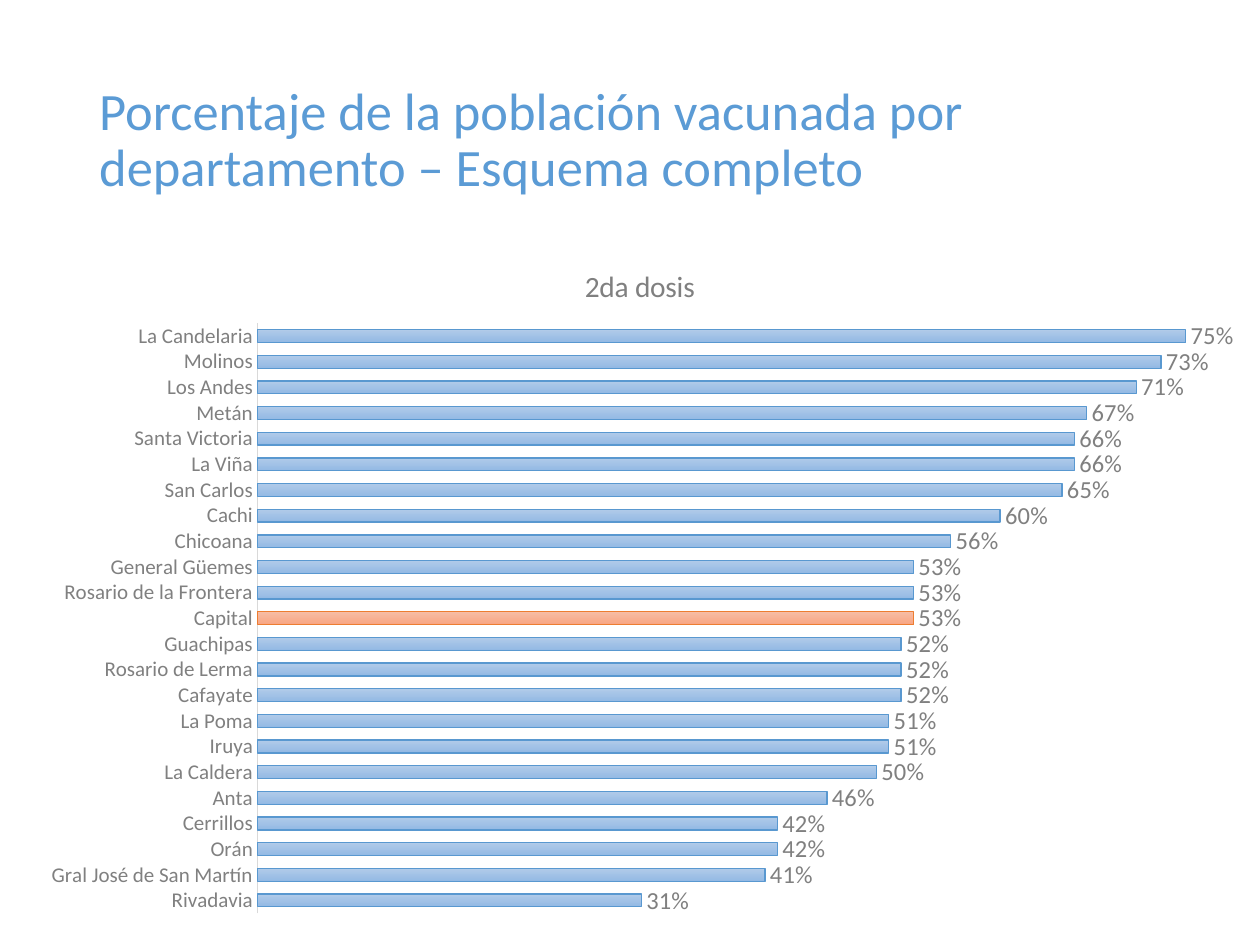
from pptx import Presentation
from pptx.util import Pt
from pptx.dml.color import RGBColor as RGB
from pptx.chart.data import CategoryChartData as ChartData
from pptx.enum.chart import XL_CHART_TYPE as Kind
from pptx.enum.chart import XL_LABEL_POSITION as Spot
from pptx.enum.chart import XL_TICK_MARK as Tick
from pptx.enum.text import MSO_ANCHOR as Anchor, PP_ALIGN as Align
from pptx.oxml import parse_xml
from pptx.oxml.ns import nsdecls, qn

COLORS = {
    "title": "5B9BD5", "text": "808080", "axis": "D9D9D9",
    "top": "B1CBE9", "base": "93B9E4", "edge": "5998D0",
    "hot top": "F7BDA5", "hot base": "F8A582", "hot edge": "ED7D31",
}
FONT = "Calibri"
HOT = "Capital"
RATES = {
    "Rivadavia": 0.31, "Gral José de San Martín": 0.41, "Orán": 0.42,
    "Cerrillos": 0.42, "Anta": 0.46, "La Caldera": 0.5, "Iruya": 0.51,
    "La Poma": 0.51, "Cafayate": 0.52, "Rosario de Lerma": 0.52,
    "Guachipas": 0.52, "Capital": 0.53, "Rosario de la Frontera": 0.53,
    "General Güemes": 0.53, "Chicoana": 0.56, "Cachi": 0.6,
    "San Carlos": 0.65, "La Viña": 0.66, "Santa Victoria": 0.66,
    "Metán": 0.67, "Los Andes": 0.71, "Molinos": 0.73,
    "La Candelaria": 0.75,
}


def place(host, index, inner="", **spots):
    """Give a chart part a fixed layout, as shares of the chart's size."""
    old = host.find(qn("c:layout"))
    if old is not None:
        host.remove(old)
    modes = '<c:xMode val="edge"/><c:yMode val="edge"/>'
    sizes = "".join(f'<c:{key} val="{val}"/>' for key, val in spots.items())
    host.insert(index, parse_xml(
        f'<c:layout {nsdecls("c")}><c:manualLayout>{inner}{modes}{sizes}'
        '</c:manualLayout></c:layout>'))


class Deck:
    def __init__(self):
        self.prs = Presentation()
        self.prs.slide_width, self.prs.slide_height = Pt(720), Pt(540)
        self.slide = self.prs.slides.add_slide(self.prs.slide_layouts[5])

    def color(self, name):
        return RGB.from_string(COLORS[name])

    def style(self, font, size, name="text"):
        font.name, font.size, font.bold = FONT, Pt(size), False
        font.color.rgb = self.color(name)

    def title(self, text, *box):
        shape = self.slide.shapes.title
        shape.left, shape.top, shape.width, shape.height = map(Pt, box)
        frame = shape.text_frame
        frame.vertical_anchor = Anchor.MIDDLE
        para = frame.paragraphs[0]
        para.alignment, para.line_spacing = Align.LEFT, 0.9
        run = para.add_run()
        run.text = text
        self.style(run.font, 30, "title")

    def paint(self, part, prefix=""):
        """Fill bars with a downward gradient and a thin edge."""
        fill = part.format.fill
        fill.gradient()
        fill.gradient_angle = 270
        for stop, name in zip(fill.gradient_stops, ("top", "base")):
            stop.color.rgb = self.color(prefix + name)
        line = part.format.line
        line.color.rgb = self.color(prefix + "edge")
        line.width = Pt(0.75)

    def bars(self, head, rates, hot, *box):
        data = ChartData(number_format="0%")
        data.categories = list(rates)
        data.add_series("Series 1", list(rates.values()))
        chart = self.slide.shapes.add_chart(
            Kind.BAR_CLUSTERED, *map(Pt, box), data).chart
        self.style(chart.font, 14)
        chart.has_legend = False
        self.head(chart, head)
        self.axes(chart)
        plot = chart.plots[0]
        plot.gap_width, plot.vary_by_categories = 100, False
        series = plot.series[0]
        series.invert_if_negative = False
        self.paint(series)
        self.paint(series.points[list(rates).index(hot)], "hot ")
        self.labels(series.data_labels)
        place(chart.element.find(".//" + qn("c:plotArea")), 0,
              '<c:layoutTarget val="inner"/>', x=0.19, y=0.13, w=0.8, h=0.85)

    def head(self, chart, text):
        chart.has_title = True
        title = chart.chart_title
        title.include_in_layout = False
        run = title.text_frame.paragraphs[0].add_run()
        run.text = text
        self.style(run.font, 16.8)
        place(chart.element.find(".//" + qn("c:title")), 1, x=0.45, y=0.04)

    def axes(self, chart):
        cats, vals = chart.category_axis, chart.value_axis
        cats.major_tick_mark = cats.minor_tick_mark = Tick.NONE
        cats.format.line.color.rgb = self.color("axis")
        cats.format.line.width = Pt(0.75)
        self.style(cats.tick_labels.font, 12)
        vals.minimum_scale, vals.maximum_scale = 0, 0.8
        vals.has_major_gridlines = False
        vals.tick_labels.number_format = "0%"
        vals.tick_labels.number_format_is_linked = False
        vals.visible = False

    def labels(self, labels):
        labels.show_value = True
        labels.position = Spot.OUTSIDE_END
        labels.number_format = "0%"
        labels.number_format_is_linked = False
        self.style(labels.font, 14)


def main():
    deck = Deck()
    deck.title("Porcentaje de la población vacunada por departamento – "
               "Esquema completo", 49.5, 28.75, 621, 104.4)
    deck.bars("2da dosis", RATES, HOT, 13, 133.2, 707, 396.7)
    deck.prs.save("out.pptx")


if __name__ == "__main__":
    main()
